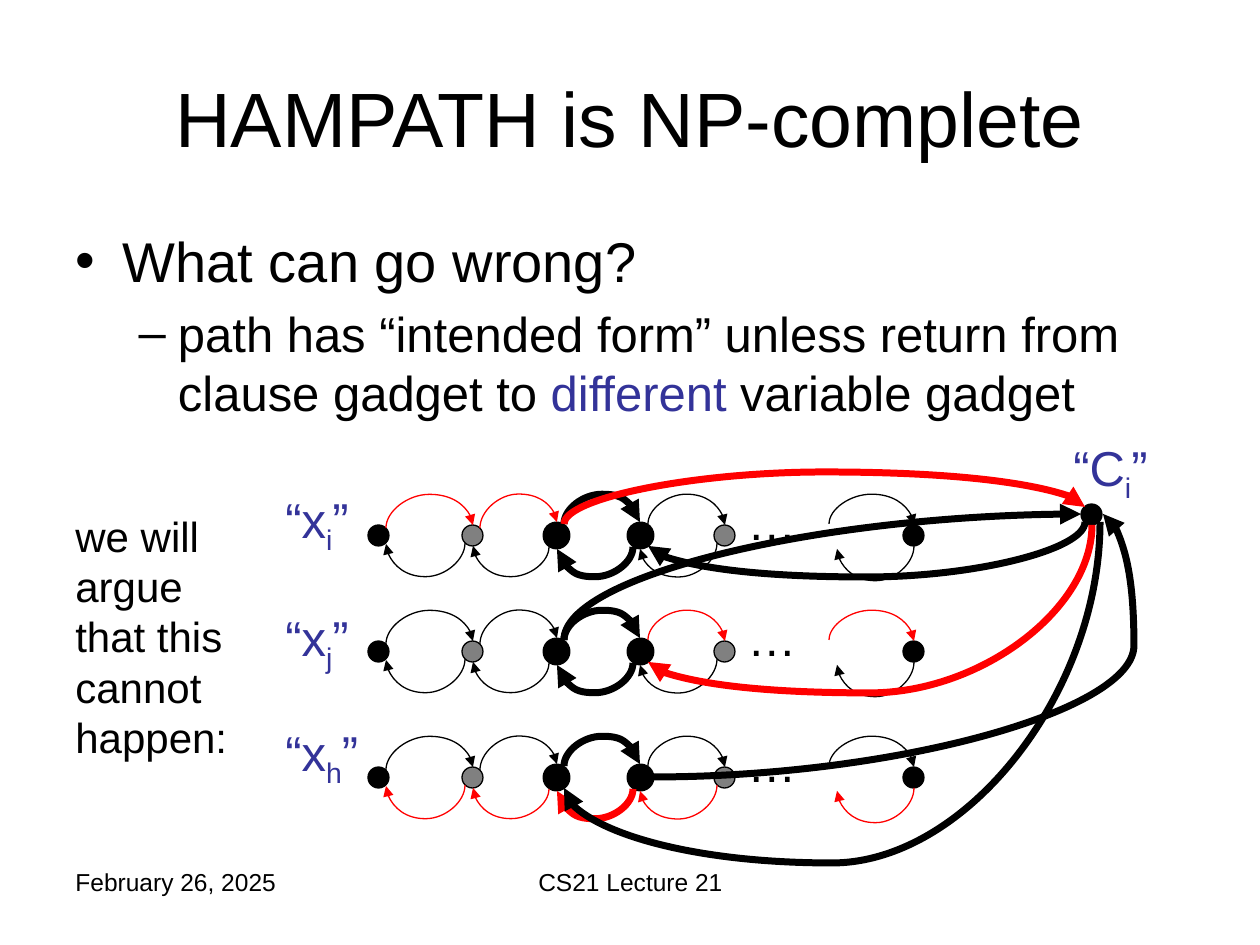
from lxml import etree
from pptx import Presentation
from pptx.dml.color import RGBColor
from pptx.enum.shapes import MSO_CONNECTOR, MSO_SHAPE
from pptx.enum.text import PP_ALIGN
from pptx.oxml.ns import qn
from pptx.util import Emu, Pt

CURVE, OVAL = MSO_CONNECTOR.CURVE, MSO_SHAPE.OVAL
LEFT, CENTER = PP_ALIGN.LEFT, PP_ALIGN.CENTER
BLACK = RGBColor(0x00, 0x00, 0x00)
GRAY = RGBColor(0x80, 0x80, 0x80)
RED = RGBColor(0xFF, 0x00, 0x00)
BLUE = RGBColor(0x33, 0x33, 0x99)
FONT = "Arial"
THIN, THICK = 0.75, 4
PX_PER_INCH = 126

# Wording
TITLE = "HAMPATH is NP-complete"
BULLETS = [
    (0, 32, [("What can go wrong?", BLACK)]),
    (1, 28, [("path has “intended form” unless return from clause gadget to ", BLACK),
             ("different", BLUE), (" variable gadget", BLACK)]),
]
NOTES = [  # text, box, size, alignment
    ("February 26, 2025", (63, 861, 294, 66), 14, LEFT),
    ("CS21 Lecture 21", (431, 861, 399, 66), 14, CENTER),
    ("we will argue that this cannot happen:", (63, 504, 189, 265), 24, LEFT),
]

# Variable gadgets: node top, label subscript, label top, red upper and lower arcs
GADGETS = [
    (525, "i", 483, {0, 1}, set()),
    (641, "j", 601, {3, 4}, set()),
    (767, "h", 716, set(), {0, 1, 2, 3, 4}),
]
NODE = 21
NODES = [(368, BLACK, THIN), (462, GRAY, THIN), (546, BLACK, THICK),
         (630, BLACK, THICK), (714, GRAY, THIN), (903, BLACK, THIN)]
# Arcs: start, end, turning level, width; heights count from the node top
UPPER_ARCS = [
    ((386, 3), (473, 0), -31, THIN),
    ((480, 3), (557, -3), -31, THIN),
    ((564, -1), (640, -3), -31, THICK),
    ((648, -1), (725, 0), -31, THIN),
    ((829, -1), (914, 0), -31, THIN),
]
LOWER_ARCS = [
    ((465, 18), (386, 19), 52, THIN),
    ((549, 22), (473, 21), 52, THIN),
    ((633, 22), (557, 24), 52, THICK),
    ((717, 18), (640, 24), 52, THIN),
    ((914, 21), (837, 24), 56, THIN),
]

# Clause gadget and its paths: start, end, turning level, colour, sideways start
CLAUSE_NODE = (1081, 504)
CLAUSE_LABEL = (1061, 431)
CLAUSE_PATHS = [
    ((564, 524), (1085, 507), 472, RED, False),
    ((1085, 522), (648, 546), 577, BLACK, False),
    ((564, 640), (1081, 514), None, BLACK, False),
    ((1092, 525), (648, 662), 693, RED, False),
    ((654, 777), (1103, 514), 1134, BLACK, True),
    ((1100, 522), (564, 788), 863, BLACK, False),
]


def px(length):
    return Emu(round(length * 914400 / PX_PER_INCH))


def place(shape, box):
    shape.left, shape.top, shape.width, shape.height = map(px, box)


def write(paragraph, parts, size):
    paragraph.font.name = FONT
    paragraph.font.size = Pt(size)
    for text, color in parts:
        run = paragraph.add_run()
        run.text = text
        run.font.color.rgb = color


def add_text(slide, box, parts, size, align=LEFT):
    frame = slide.shapes.add_textbox(*map(px, box)).text_frame
    frame.word_wrap = True
    paragraph = frame.paragraphs[0]
    paragraph.alignment = align
    write(paragraph, parts, size)
    return paragraph


def add_label(slide, left, top, letter, subscript):
    parts = [("“" + letter, BLUE), (subscript, BLUE), ("”", BLUE)]
    paragraph = add_text(slide, (left, top, 116, 72), parts, 28)
    paragraph.runs[1]._r.get_or_add_rPr().set("baseline", "-25000")


def add_node(slide, left, top, color, width):
    node = slide.shapes.add_shape(OVAL, *map(px, (left, top, NODE, NODE)))
    node.shadow.inherit = False
    node.fill.solid()
    node.fill.fore_color.rgb = color
    node.line.color.rgb = BLACK
    node.line.width = Pt(width)


def add_arc(slide, start, end, level, color, width, sideways=False):
    """Curved arrow that turns at level; without a level it is a quarter turn."""
    (x1, y1), (x2, y2) = start, end
    dx, dy = x2 - x1, y2 - y1
    if sideways:
        along, across, rotation, flip = abs(dx), abs(dy), 0, dy < 0
        origin, run = x1, dx
    else:
        along, across, rotation = abs(dy), abs(dx), 90 if dy > 0 else 270
        flip = (dx > 0) == (dy > 0)
        origin, run = y1, dy

    arc = slide.shapes.add_connector(CURVE, 0, 0, 0, 0)
    place(arc, ((x1 + x2 - along) / 2, (y1 + y2 - across) / 2, along, across))
    arc.line.color.rgb = color
    arc.line.width = Pt(width)

    properties = arc.element.spPr
    transform = properties.find(qn("a:xfrm"))
    transform.set("rot", str(rotation * 60000))
    if flip:
        transform.set("flipV", "1")
    geometry = properties.find(qn("a:prstGeom"))
    if level is None:
        geometry.set("prst", "curvedConnector2")
    else:
        turn = round((level - origin) / run * 100000)
        etree.SubElement(geometry.find(qn("a:avLst")), qn("a:gd"),
                         name="adj1", fmla=f"val {turn}")
    etree.SubElement(properties.find(qn("a:ln")), qn("a:tailEnd"), type="triangle")
    etree.SubElement(properties, qn("a:effectLst"))


def add_gadget(slide, top, red_upper, red_lower):
    for left, color, width in NODES:
        add_node(slide, left, top, color, width)
    for arcs, reds in ((UPPER_ARCS, red_upper), (LOWER_ARCS, red_lower)):
        for index, ((x1, y1), (x2, y2), level, width) in enumerate(arcs):
            add_arc(slide, (x1, top + y1), (x2, top + y2), top + level,
                    RED if index in reds else BLACK, width)
    add_text(slide, (735, top - 40, 95, 72), [("…", BLACK)], 28)


def main():
    deck = Presentation()
    deck.slide_width, deck.slide_height = px(1260), px(945)
    slide = deck.slides.add_slide(deck.slide_layouts[1])

    # Title and bullets
    title, body = slide.placeholders
    place(title, (63, 38, 1134, 157))
    write(title.text_frame.paragraphs[0], [(TITLE, BLACK)], 44)
    place(body, (63, 220, 1134, 630))
    for index, (level, size, parts) in enumerate(BULLETS):
        frame = body.text_frame
        paragraph = frame.add_paragraph() if index else frame.paragraphs[0]
        paragraph.level = level
        write(paragraph, parts, size)

    # Variable gadgets
    for top, subscript, label_top, red_upper, red_lower in GADGETS:
        add_gadget(slide, top, red_upper, red_lower)
        add_label(slide, 273, label_top, "x", subscript)

    # Clause gadget
    add_node(slide, *CLAUSE_NODE, BLACK, THIN)
    for start, end, level, color, sideways in CLAUSE_PATHS:
        add_arc(slide, start, end, level, color, THICK, sideways)
    add_label(slide, *CLAUSE_LABEL, "C", "i")

    # Side remark and footer
    for text, box, size, align in NOTES:
        add_text(slide, box, [(text, BLACK)], size, align)

    deck.save("out.pptx")


if __name__ == "__main__":
    main()
